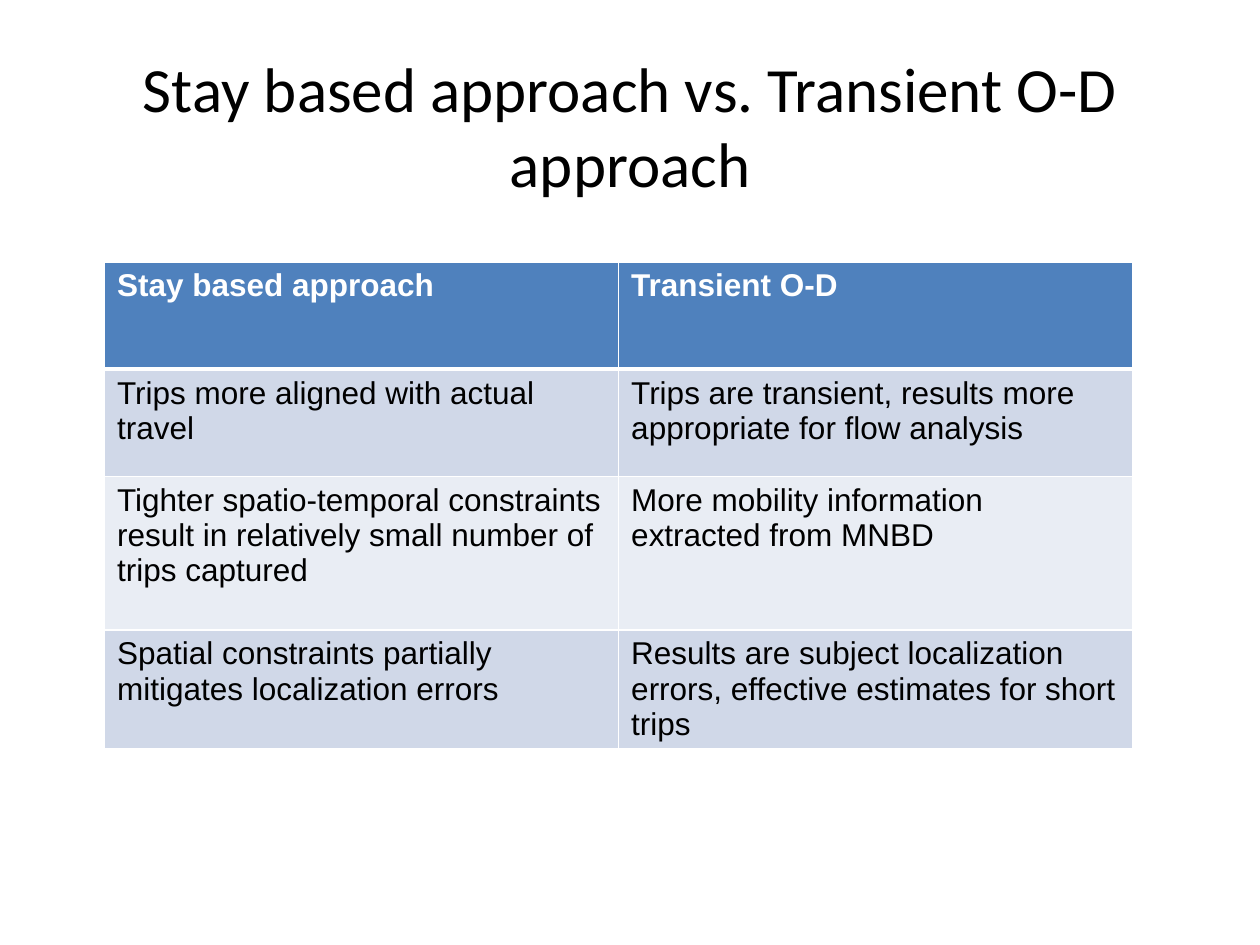
"""Build a slide that compares two trip extraction approaches in a table."""
from dataclasses import dataclass

import pptx
import pptx.dml.color
import pptx.enum.text
import pptx.oxml
import pptx.oxml.ns
import pptx.table
import pptx.text.text
import pptx.util

Inches = pptx.util.Inches
Enum = pptx.enum.text


@dataclass(frozen=True)
class Theme:
    """Hold the colours, fonts and type sizes."""

    head: str = "4F81BD"
    bands: tuple[str, str] = ("D0D8E8", "E9EDF4")
    white: str = "FFFFFF"
    black: str = "000000"
    title: str = "Calibri"
    body: str = "Arial"
    large: int = 36
    small: int = 18


@dataclass(frozen=True)
class Row:
    """Describe one table row."""

    stay: str
    transit: str
    height: float


THEME = Theme()
ROWS = [
    Row("Stay based approach", "Transient O-D", 0.85),
    Row("Trips more aligned with actual travel",
        "Trips are transient, results more appropriate for flow analysis", 0.85),
    Row("Tighter spatio-temporal constraints result in relatively small number of trips captured",
        "More mobility information extracted from MNBD", 1.22),
    Row("Spatial constraints partially mitigates localization errors",
        "Results are subject localization errors, effective estimates for short trips", 0.94),
]


def color(code: str) -> pptx.dml.color.RGBColor:
    """Turn a hex code into a colour."""
    return pptx.dml.color.RGBColor.from_string(code)


def write(frame: pptx.text.text.TextFrame, text: str, *, font: str, size: int,
          fill: str = THEME.black, bold: bool = False,
          align: Enum.PP_ALIGN = Enum.PP_ALIGN.LEFT) -> None:
    """Put formatted text in a frame."""
    para = frame.paragraphs[0]
    para.alignment = align
    run = para.add_run()
    run.text = text
    run.font.name, run.font.size, run.font.bold = font, pptx.util.Pt(size), bold
    run.font.color.rgb = color(fill)


def border(cell: pptx.table._Cell, widths: dict[str, int]) -> None:
    """Draw white cell borders with the given point widths."""
    props = cell._tc.get_or_add_tcPr()
    space = pptx.oxml.ns.nsdecls("a")
    for spot, (side, width) in enumerate(widths.items()):
        props.insert(spot, pptx.oxml.parse_xml(
            f'<a:ln{side} {space} w="{pptx.util.Pt(width)}"><a:solidFill>'
            f'<a:srgbClr val="{THEME.white}"/></a:solidFill></a:ln{side}>'))


def draw(cell: pptx.table._Cell, text: str, index: int) -> None:
    """Fill and format one cell of the row at index."""
    head = index == 0
    cell.fill.solid()
    cell.fill.fore_color.rgb = color(THEME.head if head else THEME.bands[(index - 1) % 2])
    write(cell.text_frame, text, font=THEME.body, size=THEME.small, bold=head,
          fill=THEME.white if head else THEME.black)
    border(cell, {"L": 1, "R": 1, "T": 3 if index == 1 else 1, "B": 3 if head else 1})


def main() -> None:
    """Build and save the slide."""
    deck = pptx.Presentation()
    deck.slide_width, deck.slide_height = Inches(10), Inches(7.5)
    slide = deck.slides.add_slide(deck.slide_layouts[5])

    title = slide.shapes.title
    title.left, title.top = Inches(0.5), Inches(0.23)
    title.width, title.height = Inches(9), Inches(1.52)
    frame = title.text_frame
    frame.word_wrap = True
    frame.auto_size = Enum.MSO_AUTO_SIZE.NONE
    frame.vertical_anchor = Enum.MSO_ANCHOR.MIDDLE
    frame.margin_left = frame.margin_right = Inches(0.1)
    frame.margin_top = frame.margin_bottom = Inches(0.1)
    write(frame, "Stay based approach vs. Transient O-D approach", font=THEME.title,
          size=THEME.large, align=Enum.PP_ALIGN.CENTER)

    total = sum(row.height for row in ROWS)
    table = slide.shapes.add_table(len(ROWS), 2, Inches(0.83), Inches(2.08),
                                   Inches(8.16), Inches(total)).table
    for index, row in enumerate(ROWS):
        table.rows[index].height = Inches(row.height)
        for col, text in enumerate((row.stay, row.transit)):
            draw(table.cell(index, col), text, index)
    deck.save("out.pptx")


if __name__ == "__main__":
    main()
